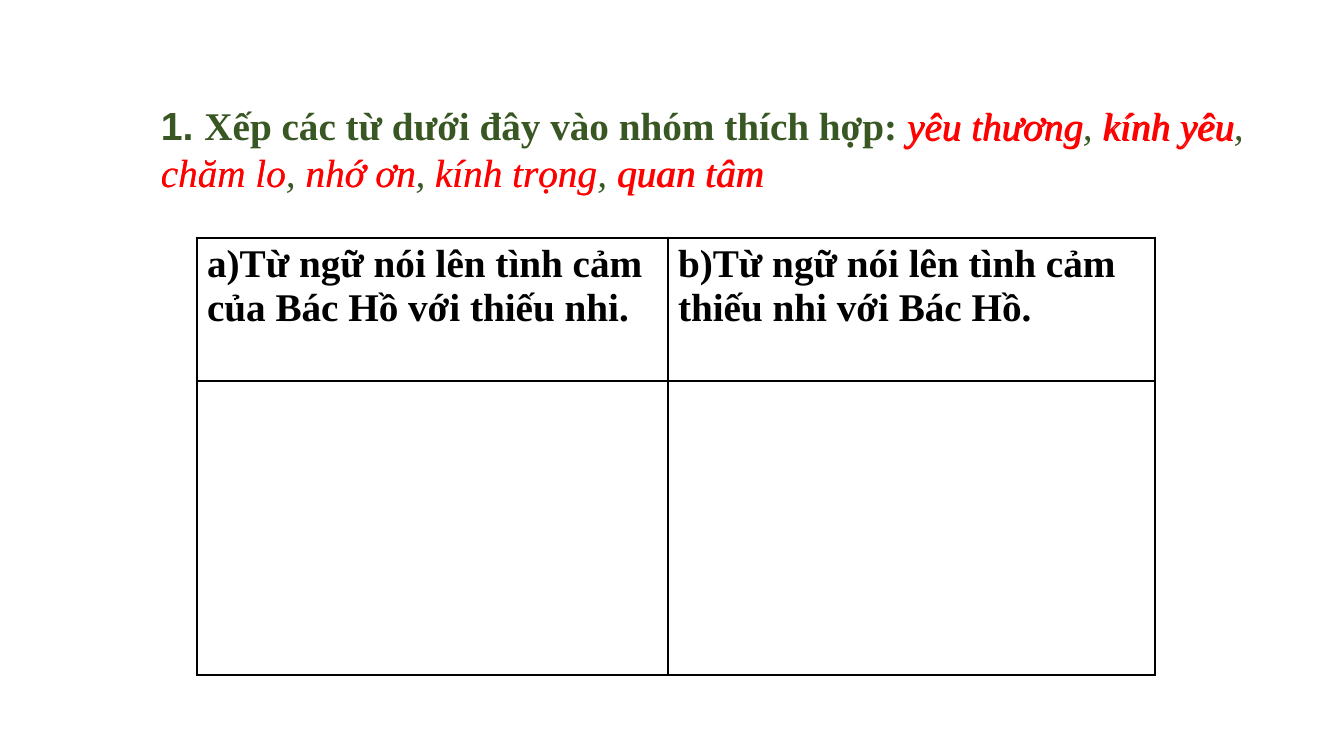
from dataclasses import dataclass

from lxml import etree
from pptx import Presentation, util as u
from pptx.dml.color import RGBColor
from pptx.enum import text
from pptx.oxml.ns import qn

PX = 914400 / 100.8


@dataclass(frozen=True)
class Theme:
    green: str = "385723"
    red: str = "FF0000"
    black: str = "000000"
    serif: str = "Times New Roman"
    sans: str = "Arial"
    size: int = 28
    thick: float = 2.25
    thin: float = 1


theme = Theme()


def px(n):
    return u.Emu(round(n * PX))


def style(font, color, name=theme.serif, bold=False, italic=False):
    font.name, font.size = name, u.Pt(theme.size)
    font.bold, font.italic = bold, italic
    font.color.rgb = RGBColor.from_string(color)


prs = Presentation()
prs.slide_width, prs.slide_height = px(1344), px(756)
slide = prs.slides.add_slide(prs.slide_layouts[6])

# Sorting table: two headed groups with room for answers
groups = [
    "a)Từ ngữ nói lên tình cảm của Bác Hồ với thiếu nhi.",
    "b)Từ ngữ nói lên tình cảm thiếu nhi với Bác Hồ.",
]
column_widths, row_heights = [471, 487], [143, 294]
sorting = slide.shapes.add_table(
    2, 2, px(197), px(238), px(sum(column_widths)), px(sum(row_heights))
).table
sorting.first_row = sorting.horz_banding = False
for column, width in zip(sorting.columns, column_widths):
    column.width = px(width)
for row, height in zip(sorting.rows, row_heights):
    row.height = px(height)

for row in range(2):
    for col in range(2):
        cell = sorting.cell(row, col)
        if row == 0:
            cell.text = groups[col]
            style(cell.text_frame.paragraphs[0].font, theme.black, bold=True)
        borders = {
            "a:lnL": theme.thin if col else theme.thick,
            "a:lnR": theme.thick if col else theme.thin,
            "a:lnT": theme.thick,
            "a:lnB": theme.thick,
        }
        properties = cell._tc.get_or_add_tcPr()
        for side, width in borders.items():
            line = etree.SubElement(properties, qn(side), w=str(u.Pt(width)))
            fill = etree.SubElement(line, qn("a:solidFill"))
            etree.SubElement(fill, qn("a:srgbClr"), val=theme.black)
        cell.fill.background()

# Words to sort: left, top, width, wrapping
words = {
    "yêu thương": (898, 97, 221, True),
    "kính yêu": (1094, 97, 167, True),
    "chăm lo": (151, 143, 169, True),
    "nhớ ơn": (296, 143, 132, False),
    "kính trọng": (425, 143, 184, False),
    "quan tâm": (608, 143, 168, False),
}

# Instruction, with the words in red and the commas in green
pieces = [
    ("1. ", theme.green, theme.sans, True),
    ("Xếp các từ dưới đây vào nhóm thích hợp: ", theme.green, theme.serif, True),
]
for position, word in enumerate(words):
    if position:
        pieces.append((", ", theme.green, theme.serif, False))
    pieces.append((word, theme.red, theme.serif, False))

instruction = slide.shapes.add_textbox(px(151), px(96), px(1128), px(105)).text_frame
instruction.word_wrap = True
for wording, color, name, bold in pieces:
    run = instruction.paragraphs[0].add_run()
    run.text = wording
    style(run.font, color, name, bold, italic=not bold)

# Separate red words, each resting on its place in the instruction
for word, (left, top, width, wraps) in words.items():
    frame = slide.shapes.add_textbox(px(left), px(top), px(width), px(57)).text_frame
    frame.word_wrap = wraps
    frame.auto_size = text.MSO_AUTO_SIZE.SHAPE_TO_FIT_TEXT
    frame.text = word
    style(frame.paragraphs[0].font, theme.red, italic=True)

prs.save("out.pptx")
